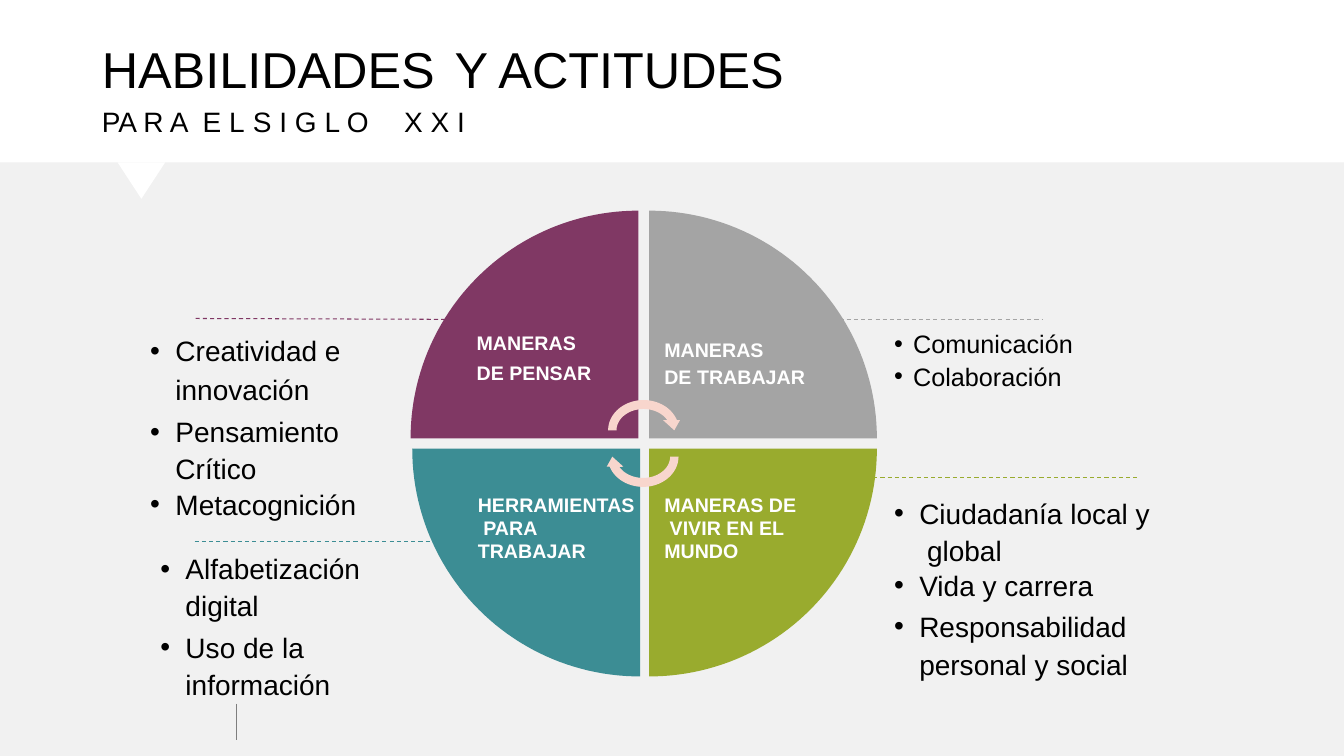
"""Build the slide on skills and attitudes for the twenty-first century."""
from dataclasses import dataclass
from math import cos, radians, sin
from typing import Any, Optional

from lxml import etree
from pptx import Presentation
from pptx.dml.color import RGBColor
from pptx.enum.dml import MSO_LINE
from pptx.enum.shapes import MSO_CONNECTOR, MSO_SHAPE
from pptx.enum.text import MSO_ANCHOR
from pptx.oxml.ns import qn
from pptx.util import Pt

RECTANGLE = MSO_SHAPE.RECTANGLE
NOTCH = MSO_SHAPE.FLOWCHART_MERGE
STRAIGHT = MSO_CONNECTOR.STRAIGHT
DASH = MSO_LINE.DASH
TOP = MSO_ANCHOR.TOP

Point = tuple[float, float]
Box = tuple[float, float, float, float]


@dataclass(frozen=True)
class Theme:
    """Colours, font and type sizes."""
    font: str = "Arial"
    ink: str = "000000"
    white: str = "FFFFFF"
    panel: str = "F1F1F1"
    plum: str = "803864"
    grey: str = "A4A4A4"
    olive: str = "99AB2E"
    teal: str = "3C8D94"
    blush: str = "F8D6CD"
    tick: str = "7E7E7E"
    title: float = 36
    large: float = 20
    medium: float = 18
    label: float = 14


@dataclass(frozen=True)
class Para:
    """One paragraph with its spacing."""
    text: str
    size: float
    spacing: float = 1.0
    before: float = 0
    bullet: bool = False
    margin: float = 0.7
    tabs: tuple[float, ...] = ()


@dataclass(frozen=True)
class TextBlock:
    """A text box and its paragraphs."""
    box: Box
    inset: float
    paras: tuple[Para, ...]
    color: str
    bold: bool = False


@dataclass(frozen=True)
class Quadrant:
    """A quarter disc with its corner point and start angle."""
    corner: Point
    start: int
    color: str


@dataclass(frozen=True)
class Rule:
    """A thin line."""
    start: Point
    end: Point
    color: str
    dash: Optional[MSO_LINE] = DASH


T = Theme()
RADIUS = 162.7
QUADRANTS = (
    Quadrant((456, 313.2), 180, T.plum),
    Quadrant((463.7, 313.2), 270, T.grey),
    Quadrant((463.7, 320.5), 0, T.olive),
    Quadrant((457.2, 320.5), 90, T.teal),
)
CYCLE_ARROWS = (((459.7, 307.4), 1), ((459.4, 326.2), -1))
RULES = (
    Rule((573.8, 228.2), (745.2, 228.2), T.grey),
    Rule((582.5, 341.3), (812.2, 341.3), T.olive),
    Rule((139, 386.6), (308.2, 386.6), T.teal),
    Rule((139.7, 227.5), (347.8, 228.2), T.plum),
    Rule((169.2, 502.6), (169.2, 528.5), T.tick, None),
)


def item(text: str, spacing: float = 1.0, before: float = 0, bullet: bool = True) -> Para:
    """Return a large list entry."""
    return Para(text, T.large, spacing, before, bullet, 18.7)


def label(text: str, spacing: float = 1.0, before: float = 0) -> Para:
    """Return a quadrant label line."""
    return Para(text, T.label, spacing, before)


TEXT_BLOCKS = (
    TextBlock((72, 19.4, 550.8, 67.7), 0.7, (
        Para("HABILIDADES\tY ACTITUDES", T.title, 1.17, tabs=(288.5,)),
        Para("PA R A\tE L\tS I G L O\tX X I", T.large, 1.16, tabs=(72.5, 144.5, 288.5)),
    ), T.ink),
    TextBlock((637.9, 348.5, 183.6, 121), 3.6, (
        item("Ciudadanía local y  global", 1.1),
        item("Vida y carrera", before=1.2),
        item("Responsabilidad", 1.15, 1.6),
        item("personal y social", 1.15, bullet=False),
    ), T.ink),
    TextBlock((113.8, 388.1, 162.7, 113.8), 3.6, (
        item("Alfabetización digital", 1.1),
        item("Uso de la información", 1.1, 3.6),
    ), T.ink),
    TextBlock((637.9, 232.6, 133.9, 48.2), 2.2, (
        Para("Comunicación", T.medium, bullet=True, margin=14.4),
        Para("Colaboración", T.medium, before=1.4, bullet=True, margin=14.4),
    ), T.ink),
    TextBlock((106.6, 234, 169.2, 144), 0.7, (
        item("Creatividad e", 1.15),
        item("innovación", 1.15, bullet=False),
        item("Pensamiento Crítico", 1.1, 4),
        item("Metacognición", before=1.2),
    ), T.ink),
    TextBlock((339.8, 230.4, 83.5, 45.4), 5.8,
              (label("MANERAS"), label("DE PENSAR", before=4.8)), T.white, True),
    TextBlock((473.8, 237.6, 101.5, 34.6), 0.7,
              (label("MANERAS", 1.17), label("DE TRABAJAR", 1.17)), T.white, True),
    TextBlock((473.8, 352.1, 95.8, 51.1), 1.4,
              (label("MANERAS DE  VIVIR EN EL  MUNDO", 0.96),), T.white, True),
    TextBlock((340.6, 352.1, 113.8, 51.1), 1.4,
              (label("HERRAMIENTAS  PARA  TRABAJAR", 0.96),), T.white, True),
)


def apply(target: Any, formats: dict[str, Any]) -> None:
    """Set every attribute named in formats."""
    for name, value in formats.items():
        setattr(target, name, value)


def paint(shape: Any, color: str) -> None:
    """Give a shape a flat fill without outline or shadow."""
    shape.shadow.inherit = False
    shape.fill.solid()
    shape.fill.fore_color.rgb = RGBColor.from_string(color)
    shape.line.fill.background()


def arc(center: Point, rx: float, ry: float, start: float, end: float) -> list[Point]:
    """Return points along an elliptical arc."""
    angles = [radians(start + (end - start) * step / 48) for step in range(49)]
    return [(center[0] + rx * cos(a), center[1] + ry * sin(a)) for a in angles]


def draw_outline(shapes: Any, points: list[Point], color: str) -> None:
    """Draw a filled closed outline."""
    first, *rest = [(Pt(x), Pt(y)) for x, y in points]
    builder = shapes.build_freeform(*first)
    builder.add_line_segments(rest, close=True)
    paint(builder.convert_to_shape(), color)


def draw_cycle_arrow(shapes: Any, center: Point, turn: int) -> None:
    """Draw a half-ring arrow, turned over when turn is negative."""
    outline = (arc((0, 0), 25.3, 21.6, 180, 340.5)
               + [(26, -7.2), (22, 0), (14, -7.2)]
               + arc((0, 0), 19.3, 15.2, 331.5, 180))
    draw_outline(shapes, [(center[0] + turn * x, center[1] + turn * y)
                          for x, y in outline], T.blush)


def draw_rule(shapes: Any, rule: Rule) -> None:
    """Draw a thin line."""
    line = shapes.add_connector(STRAIGHT, *map(Pt, rule.start + rule.end))
    line.line.color.rgb = RGBColor.from_string(rule.color)
    apply(line.line, {"width": Pt(0.75), "dash_style": rule.dash})
    etree.SubElement(line._element.spPr, qn("a:effectLst"))


def write_para(paragraph: Any, para: Para, block: TextBlock) -> None:
    """Fill a paragraph with its text and format."""
    props = paragraph._p.get_or_add_pPr()
    props.set("marL", str(Pt(para.margin)))
    props.set("indent", str(-Pt(para.margin - 0.7) if para.bullet else 0))
    if para.bullet:
        tint = etree.SubElement(props, qn("a:buClr"))
        etree.SubElement(tint, qn("a:srgbClr"), val=block.color)
        etree.SubElement(props, qn("a:buFont"), typeface=T.font)
        etree.SubElement(props, qn("a:buChar"), char="•")
    if para.tabs:
        stops = etree.SubElement(props, qn("a:tabLst"))
        for stop in para.tabs:
            etree.SubElement(stops, qn("a:tab"), pos=str(Pt(stop)), algn="l")
    apply(paragraph, {"line_spacing": para.spacing})
    if para.before:
        paragraph.space_before = Pt(para.before)
    run = paragraph.add_run()
    run.text = para.text
    apply(run.font, {"name": T.font, "size": Pt(para.size), "bold": block.bold})
    run.font.color.rgb = RGBColor.from_string(block.color)


def draw_text(shapes: Any, block: TextBlock) -> None:
    """Draw a text box."""
    frame = shapes.add_textbox(*map(Pt, block.box)).text_frame
    apply(frame, {"word_wrap": True, "vertical_anchor": TOP, "margin_left": 0,
                  "margin_right": 0, "margin_top": Pt(block.inset), "margin_bottom": 0})
    for index, para in enumerate(block.paras):
        write_para(frame.add_paragraph() if index else frame.paragraphs[0], para, block)


def main() -> None:
    """Build and save the slide."""
    deck = Presentation()
    apply(deck, {"slide_width": Pt(960), "slide_height": Pt(540)})
    shapes = deck.slides.add_slide(deck.slide_layouts[6]).shapes
    paint(shapes.add_shape(RECTANGLE, Pt(0), Pt(116), Pt(960), Pt(424)), T.panel)
    paint(shapes.add_shape(NOTCH, Pt(84), Pt(116), Pt(34), Pt(26)), T.white)
    for quadrant in QUADRANTS:
        rim = arc(quadrant.corner, RADIUS, RADIUS, quadrant.start, quadrant.start + 90)
        draw_outline(shapes, [quadrant.corner] + rim, quadrant.color)
    for block in TEXT_BLOCKS:
        draw_text(shapes, block)
    for center, turn in CYCLE_ARROWS:
        draw_cycle_arrow(shapes, center, turn)
    for rule in RULES:
        draw_rule(shapes, rule)
    deck.save("out.pptx")


if __name__ == "__main__":
    main()
